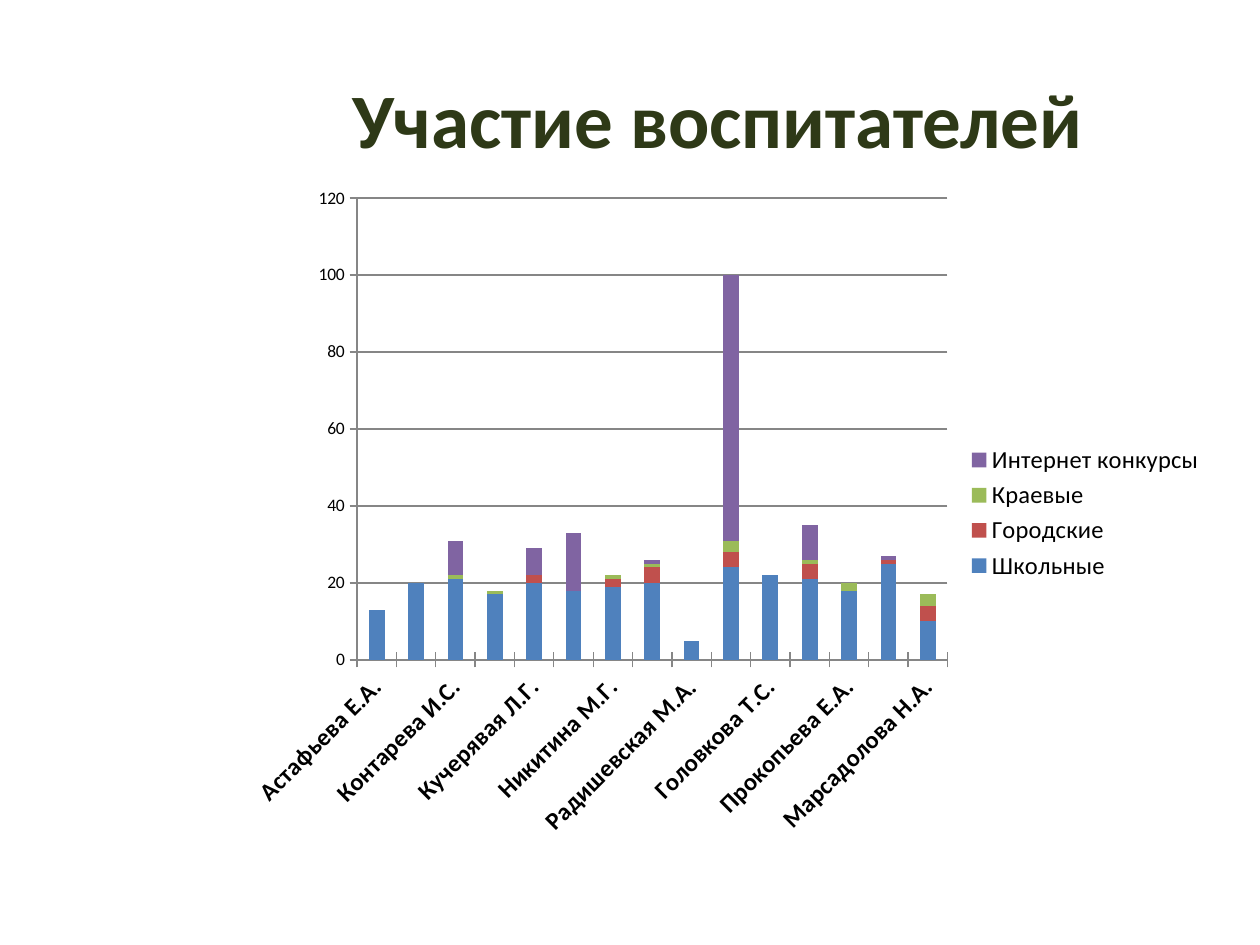
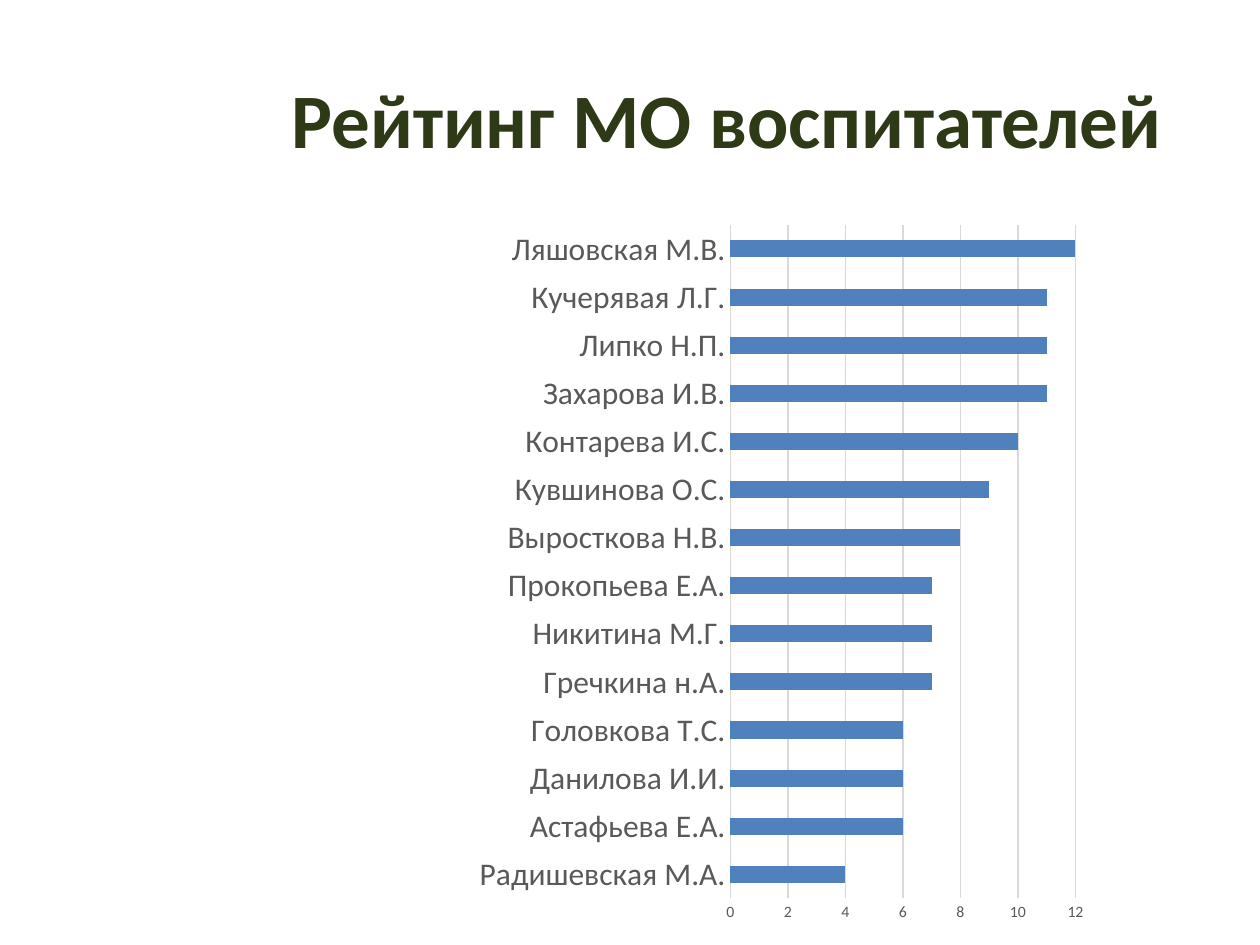
import pptx
import pptx.chart.data
import pptx.dml.color
import pptx.enum.chart
import pptx.enum.text
import pptx.oxml
import pptx.oxml.ns
import pptx.util

Inches = pptx.util.Inches
Chart = pptx.enum.chart
FONT = "Calibri"
COLORS = {
    "title": "2E3917", "black": "000000", "label": "595959",
    "pale": "D9D9D9", "gray": "868686", "school": "4F81BD",
    "city": "C0504D", "region": "9BBB59", "internet": "8064A2",
}

PARTICIPANTS = {
    "Астафьева Е.А.": (13, 0, 0, 0),
    "Данилова И.И.": (20, 0, 0, 0),
    "Контарева И.С.": (21, 0, 1, 9),
    "Кувшинова О.А.": (17, 0, 1, 0),
    "Кучерявая Л.Г.": (20, 2, 0, 7),
    "Захарова И.В.": (18, 0, 0, 15),
    "Никитина М.Г.": (19, 2, 1, 0),
    "Гречкина Н.А.": (20, 4, 1, 1),
    "Радишевская М.А.": (5, 0, 0, 0),
    "Ляшовская М.В.": (24, 4, 3, 69),
    "Головкова Т.С.": (22, 0, 0, 0),
    "Липко Н.П.": (21, 4, 1, 9),
    "Прокопьева Е.А.": (18, 0, 2, 0),
    "Выросткова Н.В.": (25, 1, 0, 1),
    "Марсадолова Н.А.": (10, 4, 3, 0),
}
CONTESTS = {
    "Школьные": "school", "Городские": "city",
    "Краевые": "region", "Интернет конкурсы": "internet",
}
RATING = {
    "Радишевская М.А.": 4, "Астафьева Е.А.": 6, "Данилова И.И.": 6,
    "Головкова Т.С.": 6, "Гречкина н.А.": 7, "Никитина М.Г.": 7,
    "Прокопьева Е.А.": 7, "Выросткова Н.В.": 8, "Кувшинова О.С.": 9,
    "Контарева И.С.": 10, "Захарова И.В.": 11, "Липко Н.П.": 11,
    "Кучерявая Л.Г.": 11, "Ляшовская М.В.": 12,
}


def rgb(name):
    return pptx.dml.color.RGBColor.from_string(COLORS[name])


def apply(target, values):
    for name, value in values.items():
        setattr(target, name, value)


def set_font(font, size, color="black", bold=False):
    apply(font, {"name": FONT, "size": pptx.util.Pt(size), "bold": bold})
    font.color.rgb = rgb(color)


def set_line(line, color):
    line.color.rgb = rgb(color)
    line.width = pptx.util.Pt(0.75)


def add_page(deck, title):
    page = deck.slides.add_slide(deck.slide_layouts[6])
    box = page.shapes.add_textbox(Inches(1.88), Inches(0.31), Inches(7.78), Inches(1.25))
    apply(box.text_frame, {
        "word_wrap": True,
        "vertical_anchor": pptx.enum.text.MSO_ANCHOR.MIDDLE,
    })
    para = box.text_frame.paragraphs[0]
    para.alignment = pptx.enum.text.PP_ALIGN.CENTER
    span = para.add_run()
    span.text = title
    set_font(span.font, 44, "title", True)
    return page


def set_plot_area(chart, left, top, width, height):
    area = chart._chartSpace.chart.plotArea
    for old in area.findall(pptx.oxml.ns.qn("c:layout")):
        area.remove(old)
    sizes = {"x": left, "y": top, "w": width, "h": height}
    places = "".join(f'<c:{key} val="{value}"/>' for key, value in sizes.items())
    area.insert(0, pptx.oxml.parse_xml(
        f'<c:layout {pptx.oxml.ns.nsdecls("c")}><c:manualLayout>'
        '<c:layoutTarget val="inner"/><c:xMode val="edge"/><c:yMode val="edge"/>'
        f'{places}</c:manualLayout></c:layout>'))


def add_bars(page, kind, place, categories, series, plot_area, gap):
    data = pptx.chart.data.CategoryChartData()
    data.categories = categories
    for name, (values, color) in series.items():
        data.add_series(name, values)
    chart = page.shapes.add_chart(kind, *map(Inches, place), data).chart
    apply(chart, {"has_title": False, "has_legend": False})
    set_font(chart.font, 10)
    set_plot_area(chart, *plot_area)
    plot = chart.plots[0]
    apply(plot, {"gap_width": gap, "vary_by_categories": False})
    for bars, (values, color) in zip(plot.series, series.values()):
        bars.format.fill.solid()
        bars.format.fill.fore_color.rgb = rgb(color)
        bars.invert_if_negative = False
    return chart


def style_axes(chart, tick, grid, top, step):
    for axis in (chart.category_axis, chart.value_axis):
        apply(axis, {"major_tick_mark": tick, "minor_tick_mark": Chart.XL_TICK_MARK.NONE})
        set_line(axis.format.line, grid)
    apply(chart.value_axis, {
        "minimum_scale": 0, "maximum_scale": top, "major_unit": step,
        "has_major_gridlines": True,
    })
    set_line(chart.value_axis.major_gridlines.format.line, grid)


def add_legend(chart, size):
    chart.has_legend = True
    apply(chart.legend, {
        "position": Chart.XL_LEGEND_POSITION.RIGHT, "include_in_layout": False,
    })
    set_font(chart.legend.font, size)


def build_participation(deck):
    page = add_page(deck, "Участие воспитателей ")
    columns = zip(*PARTICIPANTS.values())
    series = {name: (values, color)
              for (name, color), values in zip(CONTESTS.items(), columns)}
    chart = add_bars(page, Chart.XL_CHART_TYPE.COLUMN_STACKED, (1.85, 1.39, 7.81, 5.36),
                     list(PARTICIPANTS), series, (0.126, 0.034, 0.6, 0.684), 150)
    chart.plots[0].overlap = 100
    style_axes(chart, Chart.XL_TICK_MARK.CROSS, "gray", 120, 20)
    labels = chart.category_axis.tick_labels
    set_font(labels.font, 14, bold=True)
    body = chart.category_axis._element.find(
        pptx.oxml.ns.qn("c:txPr")).find(pptx.oxml.ns.qn("a:bodyPr"))
    body.set("rot", "-2700000")
    set_font(chart.value_axis.tick_labels.font, 10)
    add_legend(chart, 14)


def build_rating(deck):
    page = add_page(deck, "Рейтинг МО воспитателей")
    series = {"Series 1": (list(RATING.values()), "school")}
    chart = add_bars(page, Chart.XL_CHART_TYPE.BAR_CLUSTERED, (1.46, 1.54, 7.96, 5.98),
                     list(RATING), series, (0.545, 0.041, 0.344, 0.894), 182)
    style_axes(chart, Chart.XL_TICK_MARK.NONE, "pale", 12, 2)
    chart.value_axis.format.line.fill.background()
    set_font(chart.category_axis.tick_labels.font, 18, "label")
    set_font(chart.value_axis.tick_labels.font, 9, "label")


def main():
    deck = pptx.Presentation()
    apply(deck, {"slide_width": Inches(10), "slide_height": Inches(7.5)})
    build_participation(deck)
    build_rating(deck)
    deck.save("out.pptx")


if __name__ == "__main__":
    main()
